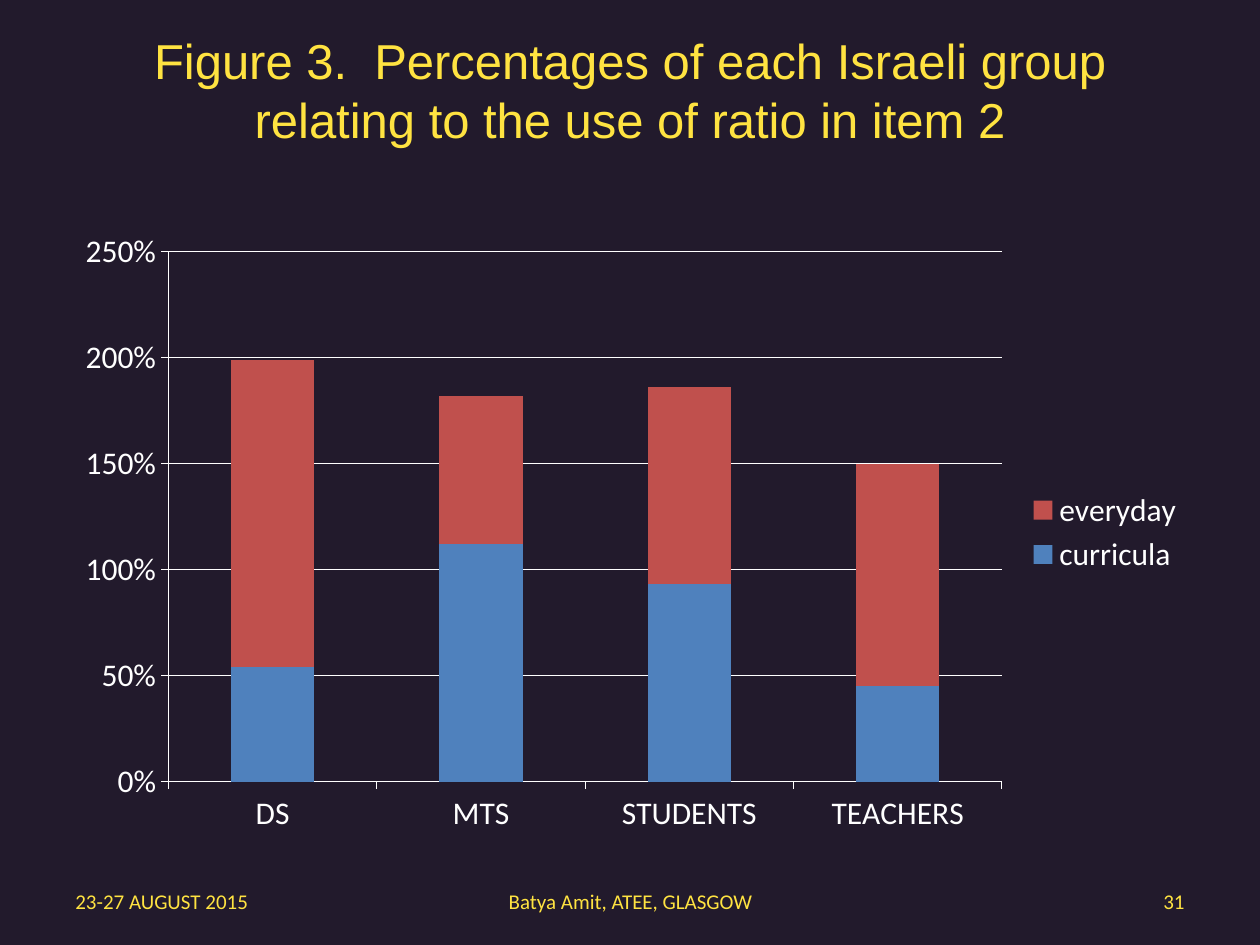
from lxml import etree
from pptx import Presentation
from pptx.chart.data import CategoryChartData
from pptx.dml.color import RGBColor
from pptx.enum.chart import XL_CHART_TYPE, XL_LEGEND_POSITION, XL_TICK_MARK
from pptx.enum.text import MSO_ANCHOR, MSO_AUTO_SIZE, PP_ALIGN
from pptx.oxml.ns import qn
from pptx.util import Inches, Pt

STACKED = XL_CHART_TYPE.COLUMN_STACKED
LEGEND_RIGHT = XL_LEGEND_POSITION.RIGHT
TICK_OUT = XL_TICK_MARK.OUTSIDE
MIDDLE = MSO_ANCHOR.MIDDLE
NO_AUTOFIT = MSO_AUTO_SIZE.NONE
LEFT, CENTER, RIGHT = PP_ALIGN.LEFT, PP_ALIGN.CENTER, PP_ALIGN.RIGHT

COLORS = {
    "background": "221A2C",
    "heading": "FFE341",
    "axis": "FFFFFF",
    "curricula": "4F81BD",
    "everyday": "C0504D",
}
GROUPS = ["DS", "MTS", "STUDENTS", "TEACHERS"]
SHARES = {
    "curricula": [0.54, 1.12, 0.93, 0.45],
    "everyday": [1.45, 0.7, 0.93, 1.05],
}
FOOTERS = [
    ("23-27 AUGUST 2015", 0.5, 2.33, LEFT),
    ("Batya Amit, ATEE, GLASGOW", 3.42, 3.17, CENTER),
    ("31", 7.17, 2.33, RIGHT),
]


def color(name):
    return RGBColor.from_string(COLORS[name])


def style_font(font, name, size, color_name):
    font.name = name
    font.size = Pt(size)
    font.color.rgb = color(color_name)


def fill_text(frame, text, font_name, size, align):
    frame.word_wrap = True
    frame.auto_size = NO_AUTOFIT
    frame.vertical_anchor = MIDDLE
    paragraph = frame.paragraphs[0]
    paragraph.text = text
    paragraph.alignment = align
    style_font(paragraph.font, font_name, size, "heading")


def add_title(page, text):
    title = page.shapes.title
    title.left, title.top = Inches(0.5), Inches(0.3)
    title.width, title.height = Inches(9), Inches(1.25)
    fill_text(title.text_frame, text, "Arial", 28, CENTER)
    # Lift the text above the middle of its box
    title.text_frame.margin_bottom = Inches(0.48)


def add_footer(page, text, left, width, align):
    box = page.shapes.add_textbox(
        Inches(left), Inches(6.95), Inches(width), Inches(0.4))
    fill_text(box.text_frame, text, "Calibri", 12, align)


def style_line(line):
    line.color.rgb = color("axis")
    line.width = Pt(0.75)


def place_plot(chart, **fractions):
    """Fix the inner plot area, in fractions of the chart frame."""
    plot_area = chart._chartSpace.chart.plotArea
    for old in plot_area.findall(qn("c:layout")):
        plot_area.remove(old)
    layout = etree.Element(qn("c:layout"))
    manual = etree.SubElement(layout, qn("c:manualLayout"))
    settings = {"layoutTarget": "inner", "xMode": "edge", "yMode": "edge",
                **fractions}
    for tag, value in settings.items():
        etree.SubElement(manual, qn(f"c:{tag}")).set("val", str(value))
    plot_area.insert(0, layout)


def add_share_chart(page):
    data = CategoryChartData(number_format="0%")
    data.categories = GROUPS
    for name, values in SHARES.items():
        data.add_series(name, values)
    chart = page.shapes.add_chart(
        STACKED, Inches(0.5), Inches(1.75), Inches(9), Inches(4.95), data).chart
    style_font(chart.font, "Calibri", 18, "axis")
    chart.has_title = False

    # Columns
    plot = chart.plots[0]
    plot.gap_width, plot.overlap = 150, 100
    plot.vary_by_categories = False
    for series in plot.series:
        series.format.fill.solid()
        series.format.fill.fore_color.rgb = color(series.name)

    # Axes and gridlines
    for axis in (chart.category_axis, chart.value_axis):
        axis.major_tick_mark = TICK_OUT
        style_line(axis.format.line)
    values_axis = chart.value_axis
    values_axis.minimum_scale, values_axis.maximum_scale = 0, 2.5
    values_axis.major_unit = 0.5
    values_axis.tick_labels.number_format = "0%"
    values_axis.tick_labels.number_format_is_linked = False
    values_axis.has_major_gridlines = True
    style_line(values_axis.major_gridlines.format.line)

    # Legend
    chart.has_legend = True
    chart.legend.position = LEGEND_RIGHT
    chart.legend.include_in_layout = False
    place_plot(chart, x=0.093, y=0.05, w=0.735, h=0.85)


def main():
    deck = Presentation()
    deck.slide_width, deck.slide_height = Inches(10), Inches(7.5)
    page = deck.slides.add_slide(deck.slide_layouts[5])
    page.background.fill.solid()
    page.background.fill.fore_color.rgb = color("background")

    add_title(page, "Figure 3.  Percentages of each Israeli group "
                    "relating to the use of ratio in item 2")
    add_share_chart(page)
    for footer in FOOTERS:
        add_footer(page, *footer)
    deck.save("out.pptx")


if __name__ == "__main__":
    main()
